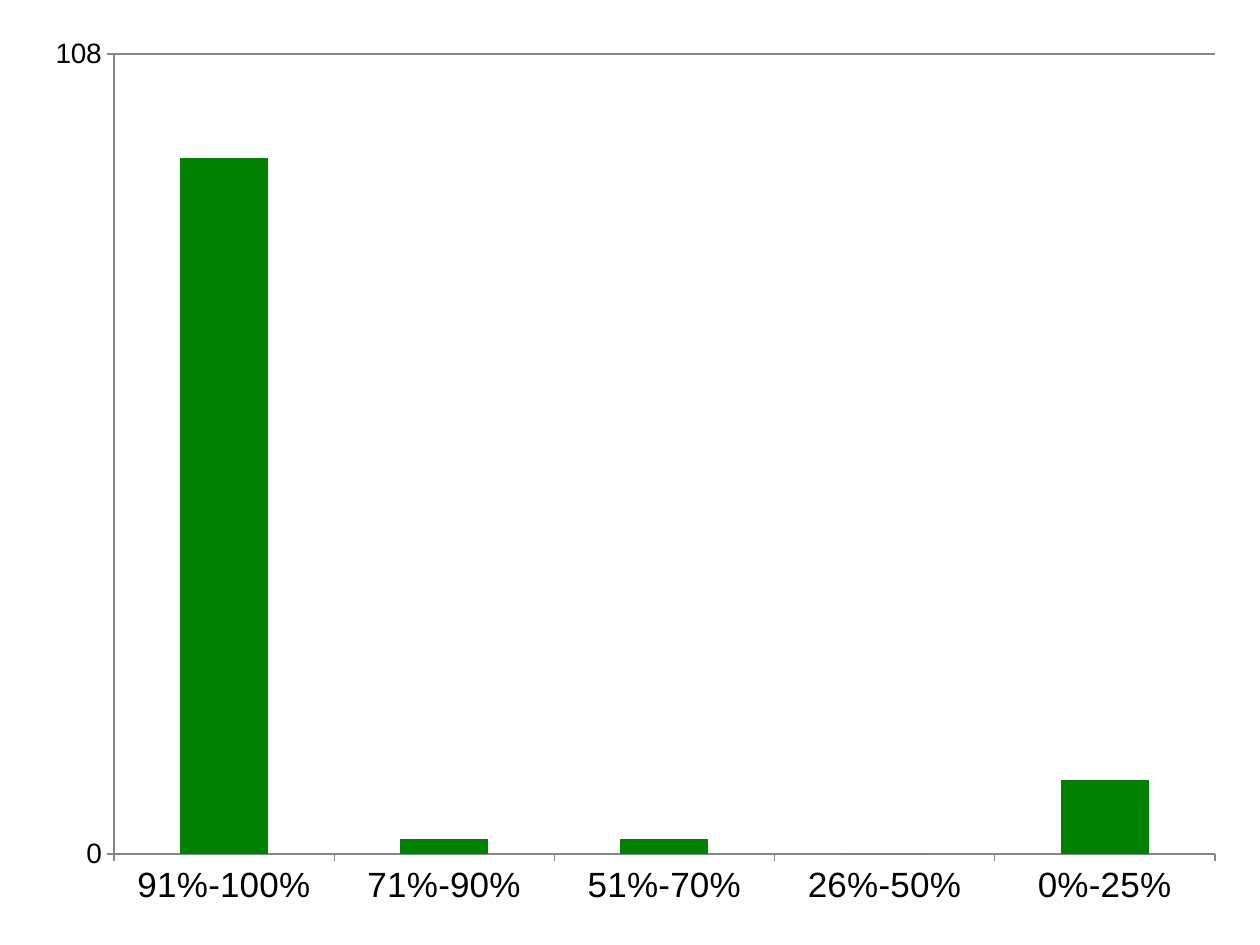
from pptx import Presentation
from pptx.chart.data import CategoryChartData
from pptx.dml.color import RGBColor
from pptx.enum.chart import XL_CHART_TYPE, XL_TICK_MARK
from pptx.util import Pt

RANGES = ["91%-100%", "71%-90%", "51%-70%", "26%-50%", "0%-25%"]
COUNTS = [94, 2, 2, 0, 10]
TOTAL = sum(COUNTS)
BAR_GREEN = "008000"
AXIS_GREY = "868686"
TEXT_BLACK = "000000"


def color(hex_value):
    return RGBColor.from_string(hex_value)


def style_line(line):
    line.color.rgb = color(AXIS_GREY)
    line.width = Pt(0.75)


def style_font(font, size):
    font.name = "Arial"
    font.size = Pt(size)
    font.color.rgb = color(TEXT_BLACK)


def style_axis(axis, label_size):
    axis.major_tick_mark = XL_TICK_MARK.OUTSIDE
    axis.minor_tick_mark = XL_TICK_MARK.NONE
    style_line(axis.format.line)
    style_font(axis.tick_labels.font, label_size)


def add_range_chart(slide):
    distribution = CategoryChartData(number_format="0")
    distribution.categories = RANGES
    distribution.add_series("Series 1", COUNTS)
    chart = slide.shapes.add_chart(
        XL_CHART_TYPE.COLUMN_CLUSTERED,
        Pt(18), Pt(12), Pt(690), Pt(516), distribution,
    ).chart
    chart.has_title = False
    chart.has_legend = False
    style_font(chart.font, 10)

    bars = chart.plots[0]
    bars.gap_width = 150
    bars.vary_by_categories = False
    bar_fill = bars.series[0].format.fill
    bar_fill.solid()
    bar_fill.fore_color.rgb = color(BAR_GREEN)

    style_axis(chart.category_axis, 20)
    count_axis = chart.value_axis
    style_axis(count_axis, 16)
    count_axis.minimum_scale = 0
    count_axis.maximum_scale = TOTAL
    count_axis.major_unit = TOTAL
    count_axis.has_major_gridlines = True
    style_line(count_axis.major_gridlines.format.line)


def main():
    deck = Presentation()
    deck.slide_width = Pt(720)
    deck.slide_height = Pt(540)
    slide = deck.slides.add_slide(deck.slide_layouts.get_by_name("Blank"))
    add_range_chart(slide)
    deck.save("out.pptx")


if __name__ == "__main__":
    main()
